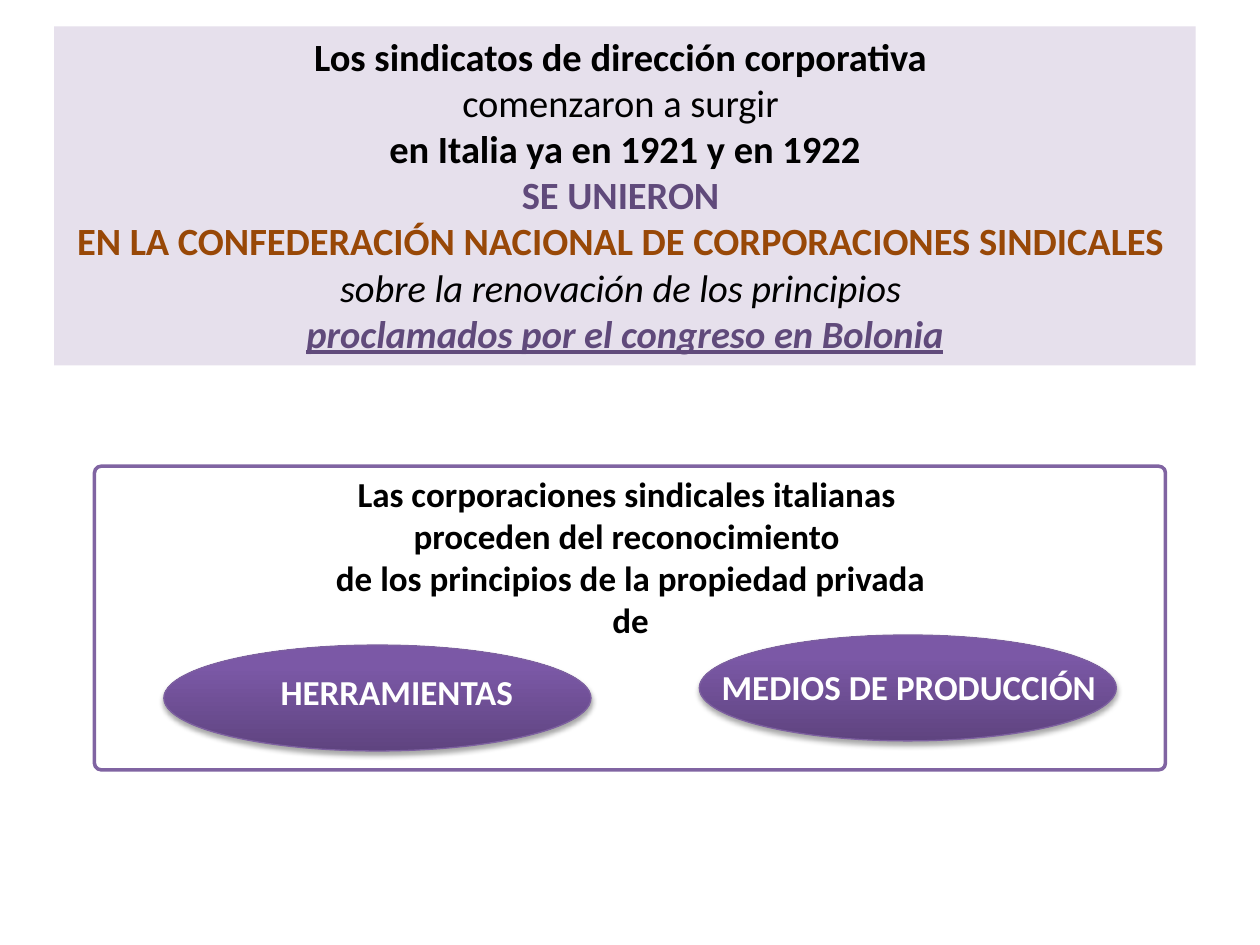
from dataclasses import dataclass

from lxml.etree import SubElement
from pptx import Presentation
from pptx.dml.color import RGBColor
from pptx.enum.shapes import MSO_SHAPE as Shape
from pptx.enum.text import MSO_ANCHOR as Anchor, MSO_AUTO_SIZE as AutoSize, PP_ALIGN as Align
from pptx.oxml.ns import qn
from pptx.util import Inches, Pt


@dataclass(frozen=True)
class Theme:
    font: str = "Calibri"
    title_size: int = 22
    body_size: int = 20
    black: str = "000000"
    white: str = "FFFFFF"
    lilac: str = "E6E0EC"
    purple: str = "604A7B"
    brown: str = "984807"
    frame: str = "8064A2"
    oval_line: str = "7D60A0"
    oval_stops: tuple = ((0, "5F4480"), (80, "7B58A6"), (100, "7C57A8"))


THEME = Theme()


def rgb(value):
    return RGBColor.from_string(value)


def place(shape, left, top, width, height):
    shape.left, shape.top = Inches(left), Inches(top)
    shape.width, shape.height = Inches(width), Inches(height)


def write_line(paragraph, text, size=THEME.body_size, color=THEME.black,
               bold=True, italic=False, underline=False):
    paragraph.alignment = Align.CENTER
    run = paragraph.add_run()
    run.text = text
    font = run.font
    font.name, font.size, font.color.rgb = THEME.font, Pt(size), rgb(color)
    font.bold, font.italic, font.underline = bold, italic, underline


def write_lines(text_frame, lines, **shared):
    """Write (text, format) pairs, one paragraph each."""
    text_frame.word_wrap = True
    text_frame.auto_size = AutoSize.NONE
    for index, (text, own) in enumerate(lines):
        paragraph = text_frame.add_paragraph() if index else text_frame.paragraphs[0]
        write_line(paragraph, text, **{**shared, **own})


def add_text(slide, box, lines, **shared):
    text_box = slide.shapes.add_textbox(*map(Inches, box))
    write_lines(text_box.text_frame, lines, **shared)


def add_outlined(slide, kind, box, line_color, line_width):
    shape = slide.shapes.add_shape(kind, *map(Inches, box))
    shape.shadow.inherit = False
    shape.line.color.rgb = rgb(line_color)
    shape.line.width = Pt(line_width)
    return shape


def shade(shape):
    """Give the shape a vertical three-stop gradient and a soft shadow below."""
    shape.fill.gradient()
    shape.fill.gradient_angle = 90
    properties = shape._element.spPr
    stops = properties.find(".//" + qn("a:gsLst"))
    for stop in list(stops):
        stops.remove(stop)
    for position, color in THEME.oval_stops:
        stop = SubElement(stops, qn("a:gs"), pos=str(position * 1000))
        SubElement(stop, qn("a:srgbClr"), val=color)
    shadow = SubElement(properties.find(qn("a:effectLst")), qn("a:outerShdw"),
                        blurRad=str(Pt(3.1)), dist=str(Pt(1.8)), dir="5400000",
                        rotWithShape="0")
    color = SubElement(shadow, qn("a:srgbClr"), val=THEME.black)
    SubElement(color, qn("a:alpha"), val="35000")


def add_oval(slide, box, label, label_box):
    """Draw a shaded oval; label_box is relative to the oval's corner."""
    left, top, _, _ = box
    shade(add_outlined(slide, Shape.OVAL, box, THEME.oval_line, 0.75))
    dx, dy, width, height = label_box
    add_text(slide, (left + dx, top + dy, width, height), [(label, {})],
             color=THEME.white)


def add_heading(slide, box):
    title = slide.shapes.title
    place(title, *box)
    title.fill.solid()
    title.fill.fore_color.rgb = rgb(THEME.lilac)
    title.text_frame.vertical_anchor = Anchor.TOP
    write_lines(title.text_frame, [
        ("Los sindicatos de dirección corporativa ", {}),
        ("comenzaron a surgir ", {"bold": False}),
        ("en Italia ya en 1921 y en 1922", {}),
        ("SE UNIERON ", {"color": THEME.purple}),
        ("EN LA CONFEDERACIÓN NACIONAL DE CORPORACIONES SINDICALES ",
         {"color": THEME.brown}),
        ("sobre la renovación de los principios ", {"bold": False, "italic": True}),
        ("proclamados por el congreso en Bolonia",
         {"color": THEME.purple, "italic": True, "underline": True}),
    ], size=THEME.title_size)


def add_property_panel(slide, box):
    left, top, width, _ = box
    frame = add_outlined(slide, Shape.ROUNDED_RECTANGLE, box, THEME.frame, 2)
    frame.adjustments[0] = 0.022
    frame.fill.solid()
    frame.fill.fore_color.rgb = rgb(THEME.white)
    add_oval(slide, (left + 0.55, top + 1.42, 3.39, 0.84),
             "HERRAMIENTAS", (0.55, 0.15, 2.6, 0.44))
    add_oval(slide, (left + 4.8, top + 1.34, 3.31, 0.84),
             "MEDIOS DE PRODUCCIÓN\N{NO-BREAK SPACE}", (0, 0.19, 3.39, 0.44))
    add_text(slide, (left + 0.08, top, width - 0.15, 1.45), [
        ("Las corporaciones sindicales italianas ", {}),
        ("proceden del reconocimiento ", {}),
        ("de los principios de la propiedad privada", {}),
        (" de ", {}),
    ])


def main():
    presentation = Presentation()
    presentation.slide_width, presentation.slide_height = Inches(10), Inches(7.5)
    title_only = presentation.slide_layouts[5]
    slide = presentation.slides.add_slide(title_only)
    add_heading(slide, (0.43, 0.21, 9.06, 2.69))
    add_property_panel(slide, (0.75, 3.7, 8.5, 2.41))
    presentation.save("out.pptx")


if __name__ == "__main__":
    main()
